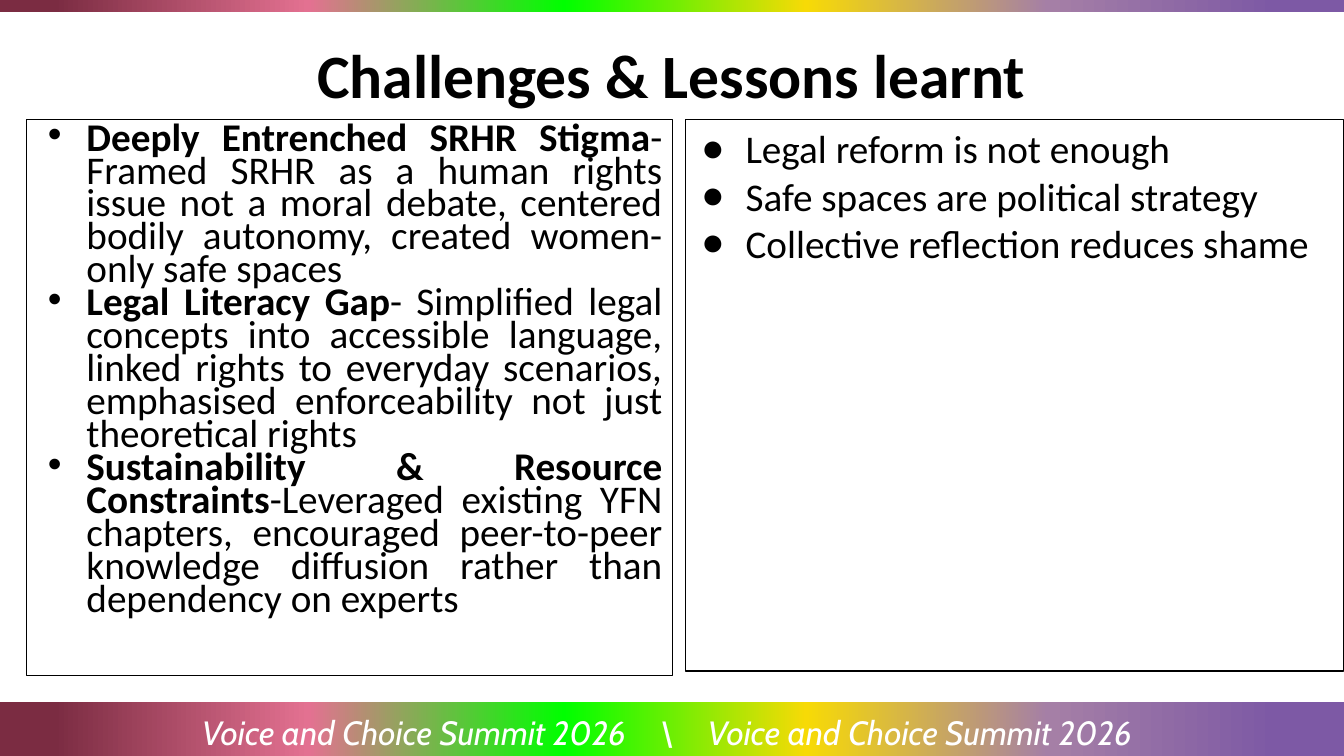
from dataclasses import dataclass

from lxml.etree import SubElement
from pptx import Presentation
from pptx.dml.color import RGBColor as Rgb
from pptx.enum.shapes import MSO_SHAPE as Preset
from pptx.enum.text import MSO_ANCHOR as Anchor, MSO_AUTO_SIZE as AutoSize, PP_ALIGN as Align
from pptx.oxml.ns import qn
from pptx.util import Cm, Pt

TITLE = "Challenges & Lessons learnt"
CHALLENGES = [
    ("Deeply Entrenched SRHR Stigma",
     "- Framed SRHR as a human rights issue not a moral debate, centered bodily autonomy, "
     "created women-only safe spaces "),
    ("Legal Literacy Gap",
     "- Simplified legal concepts into accessible language, linked rights to everyday scenarios, "
     "emphasised enforceability not just theoretical rights"),
    ("Sustainability & Resource Constraints",
     "-Leveraged existing YFN chapters, encouraged peer-to-peer knowledge diffusion "
     "rather than dependency on experts"),
]
LESSONS = [
    ("", "Legal reform is not enough"),
    ("", "Safe spaces are political strategy"),
    ("", "Collective reflection reduces shame"),
]
SUMMIT = "Voice and Choice Summit 2026"
SEPARATOR = " \\"


@dataclass(frozen=True)
class Theme:
    ink: str = "000000"
    paper: str = "FFFFFF"
    body_font: str = "Calibri"
    footer_font: str = "Cabin"
    title_size: int = 44
    body_size: int = 28
    footer_size: int = 24
    separator_spacing: int = 18
    rainbow: tuple = (
        (0, "7D59A5"), (5, "7D59A5"), (22, "A57FA6"), (40, "F7DA06"),
        (58, "00FF00"), (77, "E37191"), (96, "7B2C42"), (100, "7B2C42"),
    )


THEME = Theme()
WIDTH, HEIGHT = 33.87, 19.05
PANEL_TOP = 3.02
BANDS = [(0, 0.3), (17.68, 1.45)]
PANELS = [
    (CHALLENGES, 0.66, 16.28, 14.0, "•", 0.97, 0.7),
    (LESSONS, 17.27, 16.59, 13.89, "●", 1.12, 1.0),
]


def set_font(paragraph, name, size, color):
    font = paragraph.font
    font.name, font.size = name, Pt(size)
    font.color.rgb = Rgb.from_string(color)
    return font


def add_bullet(paragraph, mark, hanging):
    props = paragraph._p.get_or_add_pPr()
    props.set("marL", str(Cm(1.27)))
    props.set("indent", str(-Cm(hanging)))
    color = SubElement(props, qn("a:buClr"))
    SubElement(color, qn("a:srgbClr"), val=THEME.ink)
    SubElement(props, qn("a:buFont"), typeface="Arial")
    SubElement(props, qn("a:buChar"), char=mark)


def add_rectangle(slide, left, top, width, height):
    rectangle = slide.shapes.add_shape(
        Preset.RECTANGLE, Cm(left), Cm(top), Cm(width), Cm(height))
    rectangle.shadow.inherit = False
    return rectangle


def add_band(slide, top, height):
    band = add_rectangle(slide, 0, top, WIDTH, height)
    band.line.fill.background()
    band.fill.gradient()
    band.fill.gradient_angle = 180
    stops = band._element.spPr.find(qn("a:gradFill")).find(qn("a:gsLst"))
    for stop in list(stops):
        stops.remove(stop)
    for percent, color in THEME.rainbow:
        stop = SubElement(stops, qn("a:gs"), pos=str(percent * 1000))
        SubElement(stop, qn("a:srgbClr"), val=color)


def add_panel(slide, points, left, width, height, mark, hanging, spacing):
    panel = add_rectangle(slide, left, PANEL_TOP, width, height)
    panel.fill.background()
    panel.line.color.rgb = Rgb.from_string(THEME.ink)
    panel.line.width = Pt(0.75)
    frame = panel.text_frame
    frame.word_wrap = True
    frame.vertical_anchor = Anchor.TOP
    for index, (heading, detail) in enumerate(points):
        point = frame.add_paragraph() if index else frame.paragraphs[0]
        point.alignment = Align.JUSTIFY
        point.line_spacing = spacing
        add_bullet(point, mark, hanging)
        set_font(point, THEME.body_font, THEME.body_size, THEME.ink)
        if heading:
            lead = point.add_run()
            lead.text = heading
            lead.font.bold = True
        point.add_run().text = detail


def add_title(slide):
    title = slide.shapes.title
    title.left, title.top, title.width, title.height = Cm(0), Cm(0.69), Cm(WIDTH), Cm(2.34)
    frame = title.text_frame
    frame.text = TITLE
    frame.auto_size = AutoSize.NONE
    frame.vertical_anchor = Anchor.MIDDLE
    heading = frame.paragraphs[0]
    heading.alignment = Align.CENTER
    set_font(heading, THEME.body_font, THEME.title_size, THEME.ink).bold = True


def add_footer(slide):
    footer = slide.shapes.add_textbox(Cm(-0.03), Cm(17.75), Cm(WIDTH), Cm(1.24))
    frame = footer.text_frame
    frame.word_wrap = True
    frame.auto_size = AutoSize.SHAPE_TO_FIT_TEXT
    slogan = frame.paragraphs[0]
    slogan.alignment = Align.CENTER
    slogan.line_spacing = 1.07
    set_font(slogan, THEME.footer_font, THEME.footer_size, THEME.paper).italic = True
    slogan.add_run().text = SUMMIT
    separator = slogan.add_run()
    separator.text = SEPARATOR
    separator.font._element.set("spc", str(THEME.separator_spacing * 100))
    slogan.add_run().text = f" {SUMMIT} "


def main():
    deck = Presentation()
    deck.slide_width, deck.slide_height = Cm(WIDTH), Cm(HEIGHT)
    slide = deck.slides.add_slide(deck.slide_layouts[5])
    for top, height in BANDS:
        add_band(slide, top, height)
    add_title(slide)
    for panel in PANELS:
        add_panel(slide, *panel)
    add_footer(slide)
    deck.save("out.pptx")


if __name__ == "__main__":
    main()
